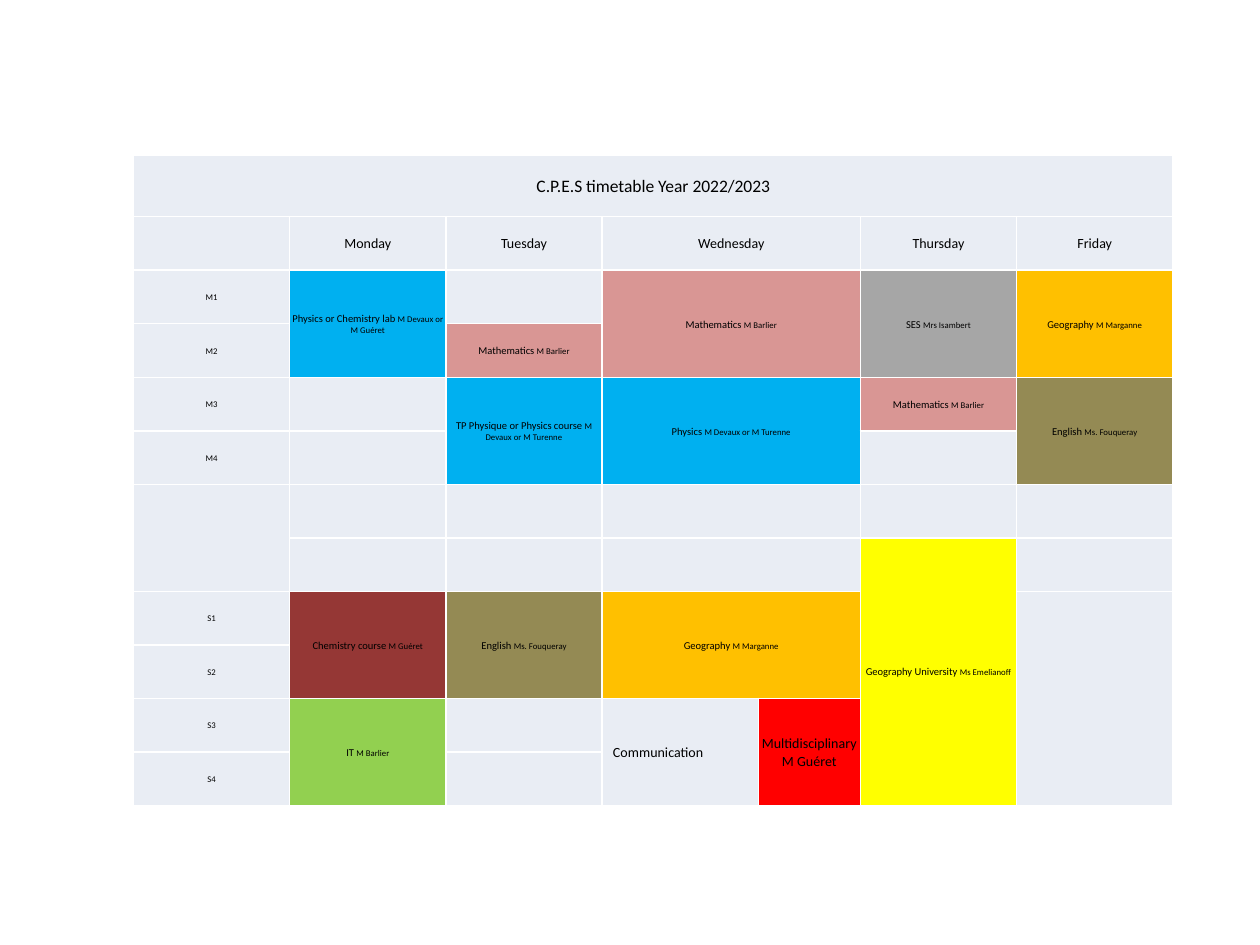
import pptx
import pptx.util
import pptx.dml.color
import pptx.enum.text
import pptx.oxml
import pptx.oxml.ns
from pptx.util import Inches, Pt

COLOURS = {
    "blank": "E9EDF4", "border": "FFFFFF", "text": "000000",
    "physics": "00B0F0", "maths": "D99694", "economics": "A6A6A6",
    "geography": "FFC000", "english": "948A54", "chemistry": "953735",
    "university": "FFFF00", "computing": "92D050", "project": "FF0000",
}
TITLE_SIZE, HEADING_SIZE, SUBJECT_SIZE, TEACHER_SIZE = 10, 8, 6, 5

COLUMN_WIDTHS = [1.24, 1.24, 1.24, 1.24, 0.81, 1.24, 1.24]
ROW_HEIGHTS = [0.49] + [0.425] * 11

TITLE = "C.P.E.S timetable Year 2022/2023"
DAYS = {1: "Monday", 2: "Tuesday", 3: "Wednesday", 5: "Thursday", 6: "Friday"}
PERIODS = {2: "M1", 3: "M2", 4: "M3", 5: "M4", 8: "S1", 9: "S2", 10: "S3", 11: "S4"}

# row, column, rows spanned, columns spanned, colour, subject, teacher
LESSONS = [
    (2, 1, 2, 1, "physics", "Physics or Chemistry lab", "M Devaux or M Guéret"),
    (2, 3, 2, 2, "maths", "Mathematics", "M Barlier"),
    (2, 5, 2, 1, "economics", "SES", "Mrs Isambert"),
    (2, 6, 2, 1, "geography", "Geography", "M Marganne"),
    (3, 2, 1, 1, "maths", "Mathematics", "M Barlier"),
    (4, 2, 2, 1, "physics", "TP Physique or Physics course", "M Devaux or M Turenne"),
    (4, 3, 2, 2, "physics", "Physics", "M Devaux or M Turenne"),
    (4, 5, 1, 1, "maths", "Mathematics", "M Barlier"),
    (4, 6, 2, 1, "english", "English", "Ms. Fouqueray"),
    (7, 5, 5, 1, "university", "Geography University", "Ms Emelianoff"),
    (8, 1, 2, 1, "chemistry", "Chemistry course", "M Guéret"),
    (8, 2, 2, 1, "english", "English", "Ms. Fouqueray"),
    (8, 3, 2, 2, "geography", "Geography", "M Marganne"),
    (10, 1, 2, 1, "computing", "IT", "M Barlier"),
]
# row, column, rows spanned, columns spanned, colour, text
WORKSHOPS = [
    (10, 3, 2, 1, "blank", "Communication"),
    (10, 4, 2, 1, "project", "Multidisciplinary M Guéret"),
]
# row, column, rows spanned, columns spanned
EMPTY_SPANS = [(6, 0, 2, 1), (6, 3, 1, 2), (7, 3, 1, 2), (8, 6, 4, 1)]


def rgb(name):
    return pptx.dml.color.RGBColor.from_string(COLOURS[name])


def add_borders(cell):
    properties = cell._tc.get_or_add_tcPr()
    for side in ("lnL", "lnR", "lnT", "lnB"):
        properties.append(pptx.oxml.parse_xml(
            f'<a:{side} {pptx.oxml.ns.nsdecls("a")} w="12700"><a:solidFill>'
            f'<a:srgbClr val="{COLOURS["border"]}"/></a:solidFill></a:{side}>'))


def paint(cell, colour):
    cell.fill.solid()
    cell.fill.fore_color.rgb = rgb(colour)


def merge(table, row, column, row_span, column_span):
    cell = table.cell(row, column)
    if row_span * column_span > 1:
        cell.merge(table.cell(row + row_span - 1, column + column_span - 1))
    return cell


def write(cell, *spans):
    """Fill a cell with centred (text, size) spans."""
    para = cell.text_frame.paragraphs[0]
    para.alignment = pptx.enum.text.PP_ALIGN.CENTER
    for text, size in spans:
        span = para.add_run()
        span.text = text
        font = {"name": "Calibri", "size": Pt(size), "bold": False}
        for key, value in font.items():
            setattr(span.font, key, value)
        span.font.color.rgb = rgb("text")


def add_timetable(slide):
    frame = slide.shapes.add_table(
        len(ROW_HEIGHTS), len(COLUMN_WIDTHS), Inches(1.06), Inches(1.23),
        Inches(sum(COLUMN_WIDTHS)), Inches(sum(ROW_HEIGHTS)))
    table = frame.table
    for column, width in zip(table.columns, COLUMN_WIDTHS):
        column.width = Inches(width)
    for row, height in zip(table.rows, ROW_HEIGHTS):
        row.height = Inches(height)

    cell_format = {
        "margin_left": Inches(0.01), "margin_right": Inches(0.01),
        "margin_top": Inches(0.01), "margin_bottom": 0,
        "vertical_anchor": pptx.enum.text.MSO_ANCHOR.MIDDLE,
    }
    for cell in table.iter_cells():
        for key, value in cell_format.items():
            setattr(cell, key, value)
        add_borders(cell)
        paint(cell, "blank")
    return table


def fill_timetable(table):
    write(merge(table, 0, 0, 1, len(COLUMN_WIDTHS)), (TITLE, TITLE_SIZE))
    merge(table, 1, 3, 1, 2)
    for column, day in DAYS.items():
        write(table.cell(1, column), (day, HEADING_SIZE))
    for row, period in PERIODS.items():
        write(table.cell(row, 0), (period, TEACHER_SIZE))
    for place in EMPTY_SPANS:
        merge(table, *place)
    for *place, colour, subject, teacher in LESSONS:
        cell = merge(table, *place)
        paint(cell, colour)
        write(cell, (subject + " ", SUBJECT_SIZE), (teacher, TEACHER_SIZE))
    for *place, colour, text in WORKSHOPS:
        cell = merge(table, *place)
        paint(cell, colour)
        write(cell, (text, HEADING_SIZE))
    # Communication sits left of the middle of its cell
    table.cell(10, 3).margin_right = Inches(0.36)


def main():
    deck = pptx.Presentation()
    deck.slide_width, deck.slide_height = Inches(10), Inches(7.5)
    slide = deck.slides.add_slide(deck.slide_layouts[6])
    fill_timetable(add_timetable(slide))
    deck.save("out.pptx")


if __name__ == "__main__":
    main()
